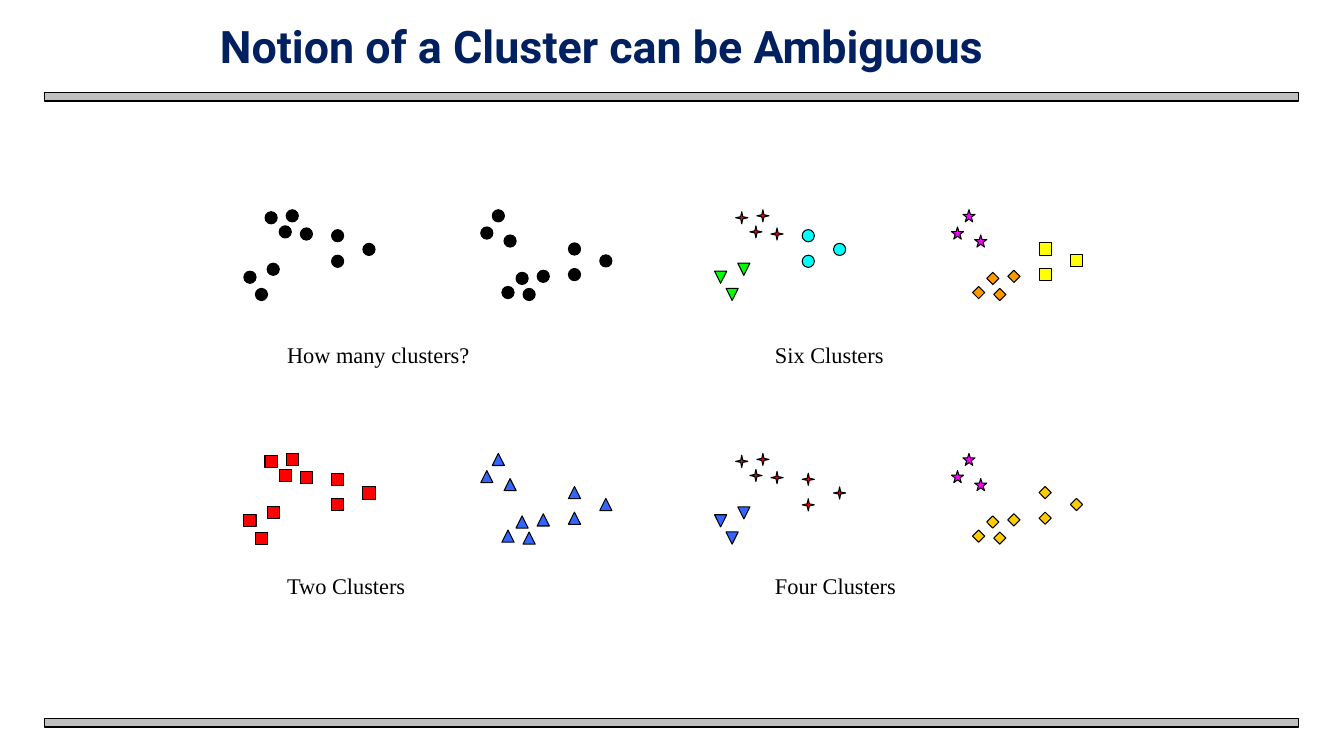
from dataclasses import dataclass

from pptx import Presentation
from pptx.dml.color import RGBColor
from pptx.enum import shapes, text
from pptx.util import Pt

KIND = shapes.MSO_SHAPE


@dataclass(frozen=True)
class Theme:
    title_font: str = "Roboto"
    label_font: str = "Times New Roman"
    title_size: int = 32
    label_size: int = 16
    navy: str = "002060"
    black: str = "000000"
    silver: str = "C0C0C0"
    red: str = "FF0000"
    blue: str = "3366FF"
    green: str = "00FF00"
    cyan: str = "00FFFF"
    magenta: str = "FF00FF"
    orange: str = "FF9900"
    gold: str = "FFCC00"
    yellow: str = "FFFF00"


THEME = Theme()

# Left half of the scatter, in three neighbourhoods, relative to the panel.
UPPER = [(40.3, 13), (15.1, 1.4), (30.2, 0), (25.2, 11.5)]
LOWER = [(16.6, 38.2), (0, 43.9), (8.2, 56.2)]
OUTER = [(62.6, 14.2), (85, 24), (62.6, 32.5)]
HALF = [UPPER, LOWER, OUTER]
SCATTER_HEIGHT = 56.2
HALF_STEP = 169.2
MARKER_SIZE = 8.7

PANEL_LEFT, PANEL_TOP = 174.2, 149.8
PANEL_STEP_X, PANEL_STEP_Y = 336.2, 174
LABEL_LEFT, LABEL_TOP = 198, 239.8
LABEL_STEP_X, LABEL_STEP_Y = 348.5, 165.6

DOT = (KIND.OVAL, THEME.black)
RED_SQUARE = (KIND.RECTANGLE, THEME.red)
BLUE_TRIANGLE = (KIND.ISOSCELES_TRIANGLE, THEME.blue)
RED_SPARK = (KIND.STAR_4_POINT, THEME.red)
PINK_STAR = (KIND.STAR_5_POINT, THEME.magenta)
GOLD_DIAMOND = (KIND.DIAMOND, THEME.gold)

# Label, column, row, then the marker of each neighbourhood: left half, right half.
PANELS = [
    ("How many clusters?", 0, 0, [DOT] * 3, [DOT] * 3),
    ("Four Clusters", 1, 1,
     [RED_SPARK, (KIND.FLOWCHART_EXTRACT, THEME.blue), RED_SPARK],
     [GOLD_DIAMOND, PINK_STAR, GOLD_DIAMOND]),
    ("Two Clusters", 0, 1, [RED_SQUARE] * 3, [BLUE_TRIANGLE] * 3),
    ("Six Clusters", 1, 0,
     [RED_SPARK, (KIND.ISOSCELES_TRIANGLE, THEME.green), (KIND.OVAL, THEME.cyan)],
     [(KIND.DIAMOND, THEME.orange), PINK_STAR, (KIND.RECTANGLE, THEME.yellow)]),
]


def apply(target, formats):
    for name, value in formats.items():
        setattr(target, name, value)


def add_figure(parent, kind, box, fill, line_width):
    figure = parent.shapes.add_shape(kind, *map(Pt, box))
    figure.shadow.inherit = False
    figure.fill.solid()
    figure.fill.fore_color.rgb = RGBColor.from_string(fill)
    figure.line.color.rgb = RGBColor.from_string(THEME.black)
    figure.line.width = Pt(line_width)
    return figure


def add_text(parent, content, box, font, color, frame_formats):
    text_box = parent.shapes.add_textbox(*map(Pt, box))
    apply(text_box.text_frame, {"word_wrap": True, **frame_formats})
    para = text_box.text_frame.paragraphs[0]
    span = para.add_run()
    span.text = content
    apply(span.font, font)
    span.font.color.rgb = RGBColor.from_string(color)
    return para


def add_half(group, left, top, markers, upside_down):
    """Draw one half of the scatter; the upside-down half turns its markers too."""
    for points, (kind, fill) in zip(HALF, markers):
        for x, y in points:
            rise = y if upside_down else SCATTER_HEIGHT - y
            box = (left + x, top + rise, MARKER_SIZE, MARKER_SIZE)
            marker = add_figure(group, kind, box, fill, 0.75)
            if upside_down:
                marker.element.spPr.xfrm.set("flipV", "1")


def add_panel(page, label, column, row, left_markers, right_markers):
    group = page.shapes.add_group_shape()
    left = PANEL_LEFT + column * PANEL_STEP_X
    top = PANEL_TOP + row * PANEL_STEP_Y
    add_half(group, left + HALF_STEP, top, right_markers, False)
    add_half(group, left, top, left_markers, True)
    box = (LABEL_LEFT + column * LABEL_STEP_X, LABEL_TOP + row * LABEL_STEP_Y, 180, 26.6)
    add_text(group, label, box,
             {"name": THEME.label_font, "size": Pt(THEME.label_size)}, THEME.black,
             {"auto_size": text.MSO_AUTO_SIZE.SHAPE_TO_FIT_TEXT})


def main():
    deck = Presentation()
    apply(deck, {"slide_width": Pt(960), "slide_height": Pt(540)})
    page = deck.slides.add_slide(deck.slide_layouts[6])
    for top in (66.3, 513.3):
        add_figure(page, KIND.RECTANGLE, (31.7, top, 896, 6), THEME.silver, 1)
    title = add_text(page, "Notion of a Cluster can be Ambiguous", (150, 12, 652, 43.2),
                     {"name": THEME.title_font, "size": Pt(THEME.title_size), "bold": True},
                     THEME.navy, {"vertical_anchor": text.MSO_ANCHOR.BOTTOM})
    title.line_spacing = Pt(36)
    for panel in PANELS:
        add_panel(page, *panel)
    deck.save("out.pptx")


if __name__ == "__main__":
    main()
